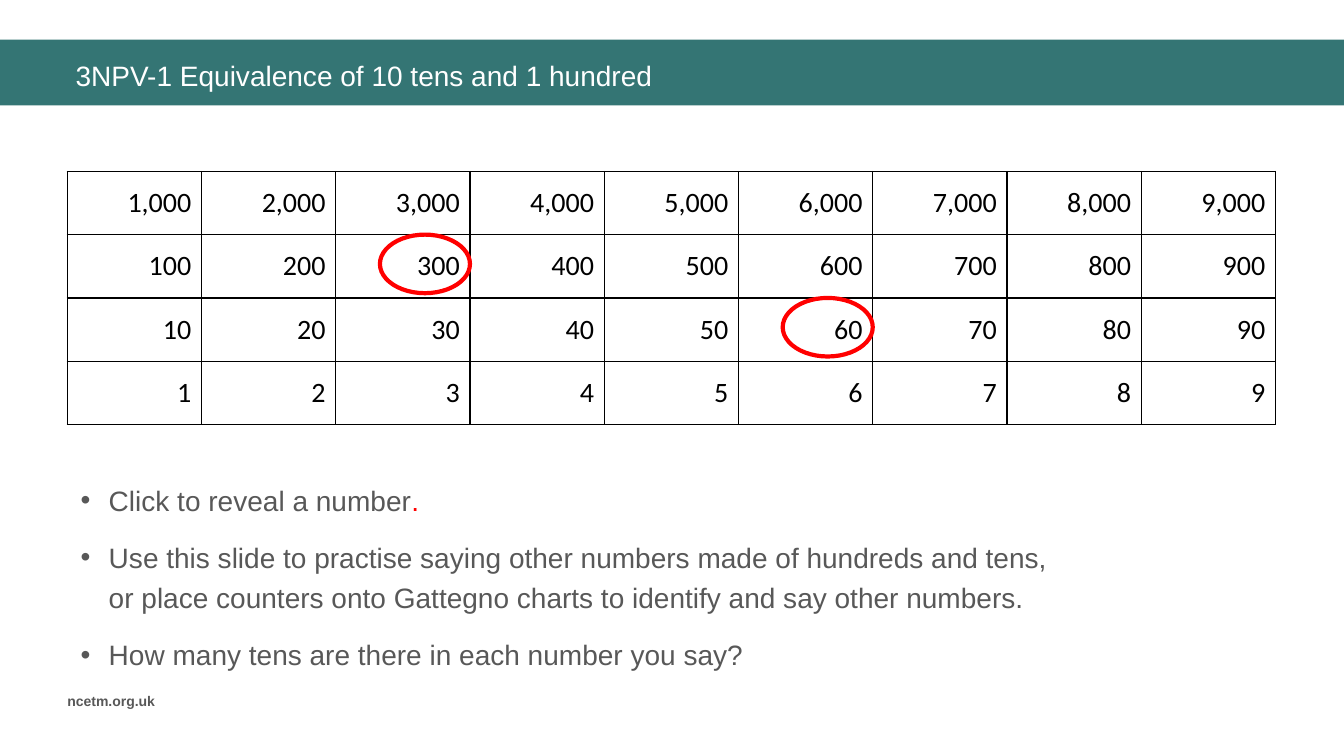
from pptx import Presentation
from pptx.dml.color import RGBColor as RGB
from pptx.enum.shapes import MSO_SHAPE as Shape
from pptx.enum.text import MSO_ANCHOR as Anchor, PP_ALIGN as Align
from pptx.oxml import parse_xml
from pptx.oxml.ns import nsdecls
from pptx.util import Inches, Pt

HUES = {"teal": "347574", "grey": "585858", "white": "FFFFFF",
        "black": "000000", "red": "FF0000"}
LEFT, TOP, COL, ROW = 5, 22.67, 9.99, 8.37
RING_W, RING_H = 6.7, 7.75


class Deck:
    """Holds the style and the slide; boxes are percentages of its size."""

    def __init__(self):
        self.prs = Presentation()
        self.prs.slide_width, self.prs.slide_height = Inches(13.33), Inches(7.5)
        self.slide = self.prs.slides.add_slide(self.prs.slide_layouts[6])
        self.shapes = self.slide.shapes

    def place(self, x, y, w, h):
        wide, high = self.prs.slide_width, self.prs.slide_height
        return [int(part * full / 100)
                for part, full in ((x, wide), (y, high), (w, wide), (h, high))]

    def run(self, para, text, hue, size=20, face="Arial", bold=False):
        run = para.add_run()
        run.text = text
        font = run.font
        font.name, font.size, font.bold = face, Pt(size), bold
        font.color.rgb = RGB.from_string(HUES[hue])

    def shape(self, kind, box, fill=None, line=None):
        shape = self.shapes.add_shape(kind, *self.place(*box))
        shape.shadow.inherit = False
        if fill:
            shape.fill.solid()
            shape.fill.fore_color.rgb = RGB.from_string(HUES[fill])
        else:
            shape.fill.background()
        if line:
            shape.line.color.rgb = RGB.from_string(HUES[line])
            shape.line.width = Pt(3)
        else:
            shape.line.fill.background()

    def frame(self, box, anchor=Anchor.TOP, wrap=True):
        frame = self.shapes.add_textbox(*self.place(*box)).text_frame
        frame.word_wrap = wrap
        frame.vertical_anchor = anchor
        return frame

    def label(self, box, text, hue, **style):
        frame = self.frame(box, Anchor.MIDDLE, False)
        self.run(frame.paragraphs[0], text, hue, **style)

    def bullets(self, box, items):
        frame = self.frame(box)
        for i, runs in enumerate(items):
            para = frame.add_paragraph() if i else frame.paragraphs[0]
            props = para._p.get_or_add_pPr()
            props.set("marL", str(Inches(0.28)))
            props.set("indent", str(-Inches(0.28)))
            for xml in (f'<a:buClr {nsdecls("a")}><a:srgbClr val="{HUES["grey"]}"/></a:buClr>',
                        f'<a:buFont {nsdecls("a")} typeface="Arial"/>',
                        f'<a:buChar {nsdecls("a")} char="•"/>'):
                props.append(parse_xml(xml))
            para.line_spacing = 1.2
            para.space_after = Pt(6)
            if i:
                para.space_before = Pt(6)
            for text, hue in runs:
                self.run(para, text, hue)

    def border(self, cell):
        props = cell._tc.get_or_add_tcPr()
        for side in "LRTB":
            props.append(parse_xml(
                f'<a:ln{side} {nsdecls("a")} w="{Pt(1)}"><a:solidFill>'
                f'<a:srgbClr val="{HUES["black"]}"/></a:solidFill></a:ln{side}>'))

    def table(self, rows):
        high, wide = len(rows), len(rows[0])
        box = self.place(LEFT, TOP, COL * wide, ROW * high)
        table = self.shapes.add_table(high, wide, *box).table
        table.first_row = table.horz_banding = False
        for r, row in enumerate(rows):
            for c, text in enumerate(row):
                cell = table.cell(r, c)
                self.border(cell)
                cell.fill.background()
                cell.vertical_anchor = Anchor.MIDDLE
                para = cell.text_frame.paragraphs[0]
                para.alignment = Align.RIGHT
                self.run(para, text, "black", face="Calibri")

    def ring(self, row, col):
        box = (LEFT + COL * col - RING_W, TOP + ROW * (row - 1), RING_W, RING_H)
        self.shape(Shape.OVAL, box, line="red")


def main():
    deck = Deck()
    deck.shape(Shape.RECTANGLE, (0, 5.25, 100, 8.7), fill="teal")
    deck.label((4.28, 90.93, 9.08, 3.6), "ncetm.org.uk", "grey", size=10, bold=True)
    deck.label((4.88, 6.8, 92.4, 6.27),
               "3NPV-1 Equivalence of 10 tens and 1 hundred", "white")
    deck.table([[f"{n * unit:,}" for n in range(1, 10)]
                for unit in (1000, 100, 10, 1)])
    deck.ring(3, 6)
    deck.ring(2, 3)
    deck.bullets((5.25, 62.4, 75.17, 29.07), [
        [("Click to reveal a number", "grey"), (".", "red")],
        [("Use this slide to practise saying other numbers made of hundreds and tens, "
          "or place counters onto Gattegno charts to identify and say other numbers.",
          "grey")],
        [("How many tens are there in each number you say?", "grey")],
    ])
    deck.prs.save("out.pptx")


if __name__ == "__main__":
    main()
